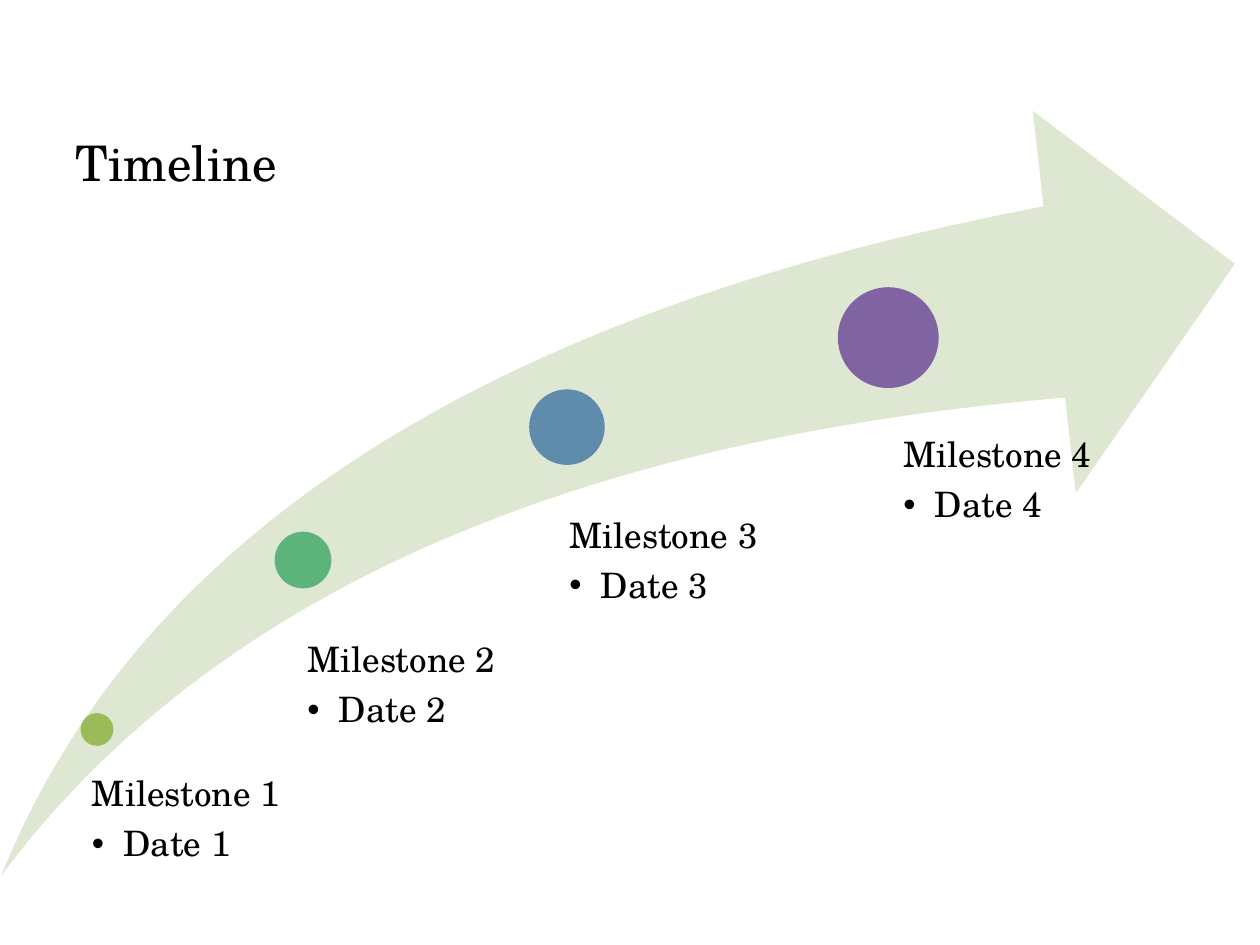
from lxml import etree
from pptx import Presentation
from pptx.dml.color import RGBColor
from pptx.enum.shapes import MSO_SHAPE
from pptx.enum.text import MSO_ANCHOR, PP_ALIGN
from pptx.oxml.ns import qn
from pptx.util import Inches, Pt

SWOOSH, OVAL = MSO_SHAPE.SWOOSH_ARROW, MSO_SHAPE.OVAL
TOP, LEFT = MSO_ANCHOR.TOP, PP_ALIGN.LEFT
FONT = "TeX Gyre Schola"
COLORS = {
    "text": "000000",
    "arrow": "DEE7D1",
    "lime": "9BBB59",
    "green": "5CB37C",
    "blue": "608CAB",
    "purple": "8064A2",
}


def add_filled_shape(shapes, kind, left, top, width, height, color):
    shape = shapes.add_shape(
        kind, Inches(left), Inches(top), Inches(width), Inches(height))
    shape.shadow.inherit = False
    shape.fill.solid()
    shape.fill.fore_color.rgb = RGBColor.from_string(COLORS[color])
    shape.line.fill.background()
    return shape


def add_text(paragraph, text, size):
    paragraph.alignment = LEFT
    run = paragraph.add_run()
    run.text = text
    run.font.name = FONT
    run.font.size = Pt(size)
    run.font.color.rgb = RGBColor.from_string(COLORS["text"])


presentation = Presentation()
presentation.slide_width = Inches(10)
presentation.slide_height = Inches(7.5)
slide = presentation.slides.add_slide(presentation.slide_layouts[5])

# Title
title = slide.shapes.title
title.left, title.top = Inches(0.5), Inches(1)
title.width, title.height = Inches(9), Inches(1)
title.text_frame.vertical_anchor = TOP
add_text(title.text_frame.paragraphs[0], "Timeline", 28)

# Rising arrow
timeline = slide.shapes.add_group_shape()
arrow = add_filled_shape(
    timeline.shapes, SWOOSH, 0.01, 0.88, 9.79, 6.07, "arrow")
arrow.adjustments[0] = 0.25
arrow.adjustments[1] = 0.25

# Milestones: dot (left, top, diameter, colour), label (left, top, width, height, inset)
milestones = [
    ((0.64, 5.66, 0.26, "lime"), (0.59, 6.16, 2.33, 1.68, 0.14)),
    ((2.18, 4.22, 0.45, "green"), (2.2, 5.1, 2.37, 2.63, 0.24)),
    ((4.2, 3.09, 0.6, "blue"), (4.2, 4.11, 2.37, 2.65, 0.32)),
    ((6.65, 2.28, 0.8, "purple"), (6.75, 3.47, 2.37, 3.26, 0.42)),
]
for number, (dot, label) in enumerate(milestones, start=1):
    dot_left, dot_top, diameter, color = dot
    add_filled_shape(
        timeline.shapes, OVAL, dot_left, dot_top, diameter, diameter, color)

    *box, inset = label
    text_box = timeline.shapes.add_textbox(*[Inches(value) for value in box])
    frame = text_box.text_frame
    frame.word_wrap = True
    frame.vertical_anchor = TOP
    frame.margin_left = Inches(inset)
    frame.margin_top = frame.margin_right = frame.margin_bottom = 0

    heading = frame.paragraphs[0]
    heading.line_spacing = 0.9
    heading.space_after = Pt(7)
    add_text(heading, f"Milestone {number}", 20)

    date = frame.add_paragraph()
    date.level = 1
    properties = date._p.get_or_add_pPr()
    properties.set("marL", str(Inches(0.25)))
    properties.set("indent", str(-Inches(0.25)))
    etree.SubElement(properties, qn("a:buFont"), typeface="Arial")
    etree.SubElement(properties, qn("a:buChar"), char="•")
    date.line_spacing = 0.9
    date.space_after = Pt(3)
    add_text(date, f"Date {number}", 20)

presentation.save("out.pptx")
